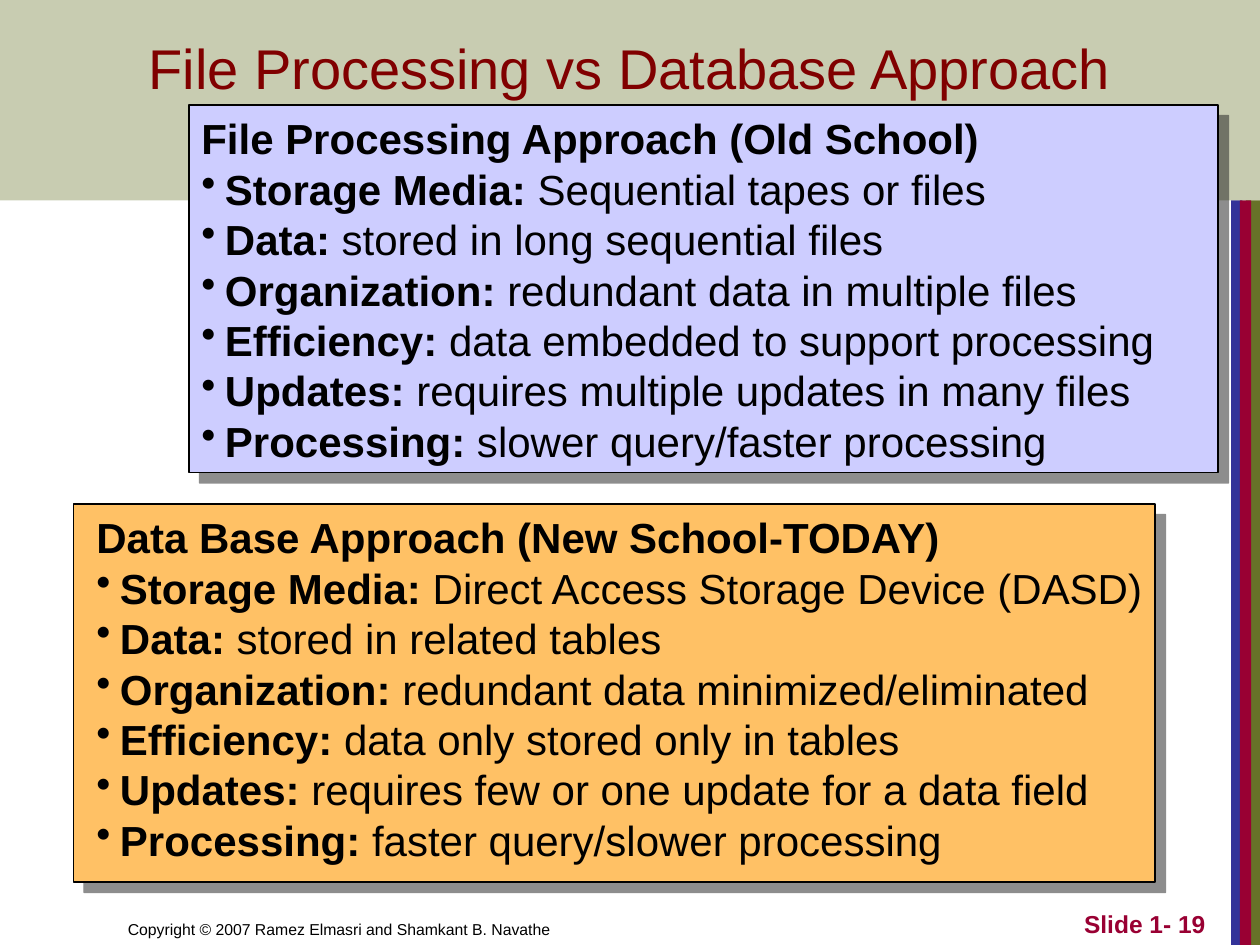
"""Build the slide comparing file processing with the database approach."""
import pptx
import pptx.dml.color
import pptx.enum.shapes
import pptx.enum.text
import pptx.oxml
import pptx.oxml.ns
import pptx.util

Pt = pptx.util.Pt
RGBColor = pptx.dml.color.RGBColor
Align = pptx.enum.text.PP_ALIGN
Anchor = pptx.enum.text.MSO_ANCHOR

OLIVE = RGBColor(0x67, 0x72, 0x28)
BLUE = RGBColor(0x33, 0x33, 0x99)
CRIMSON = RGBColor(0x99, 0x00, 0x33)
MAROON = RGBColor(0x80, 0x00, 0x00)
BLACK = RGBColor(0x00, 0x00, 0x00)
LAVENDER = RGBColor(0xCD, 0xCD, 0xFF)
ORANGE = RGBColor(0xFF, 0xC1, 0x65)

NAMESPACE = pptx.oxml.ns.nsdecls("a")
SHADOW = (
    f'<a:outerShdw {NAMESPACE} blurRad="0" dist="{Pt(8.5)}" dir="2700000" algn="tl" rotWithShape="0">'
    '<a:srgbClr val="1C1C1C"><a:alpha val="50000"/></a:srgbClr></a:outerShdw>'
)

deck = pptx.Presentation()
deck.slide_width, deck.slide_height = Pt(720), Pt(540)
page = deck.slides.add_slide(deck.slide_layouts[6])


def add_rectangle(bounds, color):
    box = page.shapes.add_shape(
        pptx.enum.shapes.MSO_SHAPE.RECTANGLE, *[Pt(length) for length in bounds]
    )
    box.shadow.inherit = False
    box.fill.solid()
    box.fill.fore_color.rgb = color
    box.line.fill.background()
    return box


def add_text(bounds, paragraphs, size, color, align=Align.LEFT, anchor=Anchor.TOP):
    box = page.shapes.add_textbox(*[Pt(length) for length in bounds])
    frame = box.text_frame
    frame.word_wrap = True
    frame.vertical_anchor = anchor
    for index, pieces in enumerate(paragraphs):
        para = frame.add_paragraph() if index else frame.paragraphs[0]
        para.alignment = align
        for text, bold in pieces:
            span = para.add_run()
            span.text = text
            span.font.name = "Arial"
            span.font.size = Pt(size)
            span.font.bold = bold
            span.font.color.rgb = color
    return frame


for left, width, color in [(712, 8, OLIVE), (703.5, 6.5, BLUE), (708.5, 6.5, CRIMSON)]:
    add_rectangle((left, 114.5, width, 425.5), color)

band = add_rectangle((0, 0, 720, 114.5), OLIVE)
band_color = band.fill._xPr.find(".//" + pptx.oxml.ns.qn("a:srgbClr"))
band_color.append(pptx.oxml.parse_xml(f'<a:alpha {NAMESPACE} val="36000"/>'))

add_text(
    (66, 504, 354, 36),
    [[("Copyright © 2007 Ramez Elmasri and Shamkant B. Navathe", False)]],
    9, BLACK, anchor=Anchor.BOTTOM,
)
add_text(
    (546, 504, 150, 36), [[("Slide 1- 19", True)]],
    14, CRIMSON, Align.RIGHT, Anchor.BOTTOM,
)
add_text(
    (0, 0, 720, 61), [[("File Processing vs Database Approach", False)]],
    32, MAROON, Align.CENTER, Anchor.BOTTOM,
)

topics = ["Storage Media", "Data", "Organization", "Efficiency", "Updates", "Processing"]
panels = [
    (
        (108, 60, 588, 210), LAVENDER, (108, 61, 582, 209),
        "File Processing Approach (Old School)",
        [
            "Sequential tapes or files",
            "stored in long sequential files",
            "redundant data in multiple files",
            "data embedded to support processing",
            "requires multiple updates in many files",
            "slower query/faster processing",
        ],
    ),
    (
        (42, 288, 618, 216), ORANGE, (48, 289, 624, 209),
        "Data Base Approach (New School-TODAY)",
        [
            "Direct Access Storage Device (DASD)",
            "stored in related tables",
            "redundant data minimized/eliminated",
            "data only stored only in tables",
            "requires few or one update for a data field",
            "faster query/slower processing",
        ],
    ),
]

for panel_bounds, color, text_bounds, heading, details in panels:
    panel = add_rectangle(panel_bounds, color)
    panel.line.color.rgb = BLACK
    panel.line.width = Pt(0.75)
    effects = panel._element.spPr.find(pptx.oxml.ns.qn("a:effectLst"))
    effects.append(pptx.oxml.parse_xml(SHADOW))

    lines = [[(heading, True)]]
    for topic, detail in zip(topics, details):
        lines.append([(f"{topic}:", True), (f" {detail}", False)])
    frame = add_text(text_bounds, lines, 24, BLACK)
    for index, para in enumerate(frame.paragraphs):
        properties = para._p.get_or_add_pPr()
        properties.set("marL", str(Pt(13.5)))
        properties.set("indent", str(Pt(-13.5)))
        if index:
            properties.append(pptx.oxml.parse_xml(f'<a:buChar {NAMESPACE} char="•"/>'))

deck.save("out.pptx")
